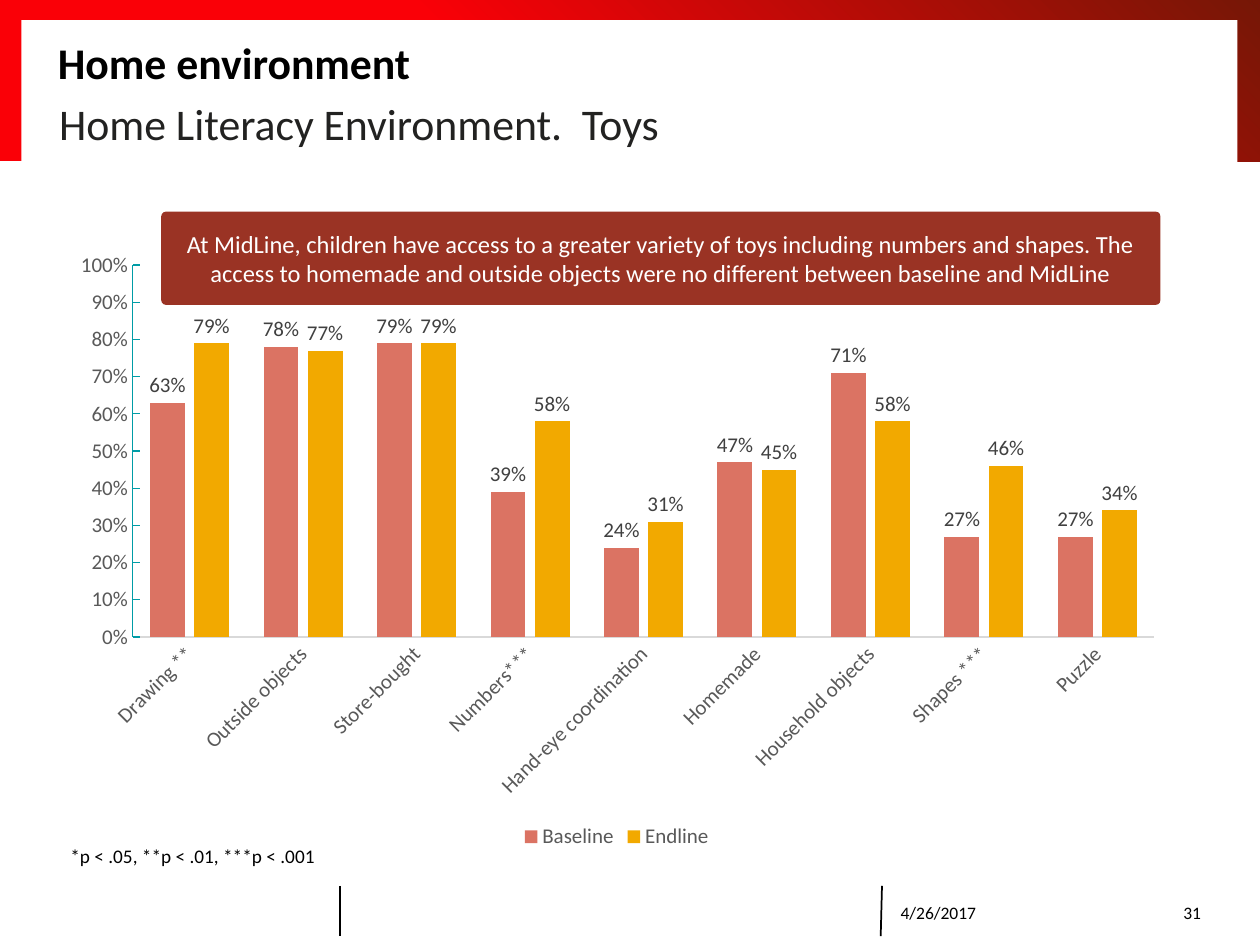
from lxml import etree
from pptx import Presentation
from pptx import util as u
from pptx.chart import data
from pptx.dml import color
from pptx.enum import chart as ch, shapes, text
from pptx.oxml import ns

FONT = "Calibri"
TITLE = "Home environment"
SUBTITLE = "Home Literacy Environment.  Toys"
MESSAGE = ("At MidLine, children have access to a greater variety of toys including "
           "numbers and shapes. The access to homemade and outside objects were no "
           "different between baseline and MidLine")
SIGNIFICANCE = "*p < .05, **p < .01, ***p < .001"
DATE, PAGE = "4/26/2017", "31"
TOYS = [
    ("Drawing **", 0.63, 0.79),
    ("Outside objects", 0.78, 0.77),
    ("Store-bought", 0.79, 0.79),
    ("Numbers***", 0.39, 0.58),
    ("Hand-eye coordination", 0.24, 0.31),
    ("Homemade", 0.47, 0.45),
    ("Household objects", 0.71, 0.58),
    ("Shapes ***", 0.27, 0.46),
    ("Puzzle", 0.27, 0.34),
]
ROUNDS = [("Baseline", "DB7363"), ("Endline", "F2A900")]
PLOT_AREA = {"x": 0.067, "y": 0.04, "w": 0.914, "h": 0.606}
DIVIDERS = [(2.7, 2.7), (7, 6.99)]


def rgb(value):
    return color.RGBColor.from_string(value)


def inches(*lengths):
    return [u.Inches(length) for length in lengths]


def style_font(font, size, hex_color, bold=False):
    font.name, font.size, font.bold = FONT, u.Pt(size), bold
    font.color.rgb = rgb(hex_color)


def write(shape, words, size=10, hex_color="000000", bold=False, inset=None, wrap=True,
          align=text.PP_ALIGN.LEFT, anchor=text.MSO_ANCHOR.MIDDLE, after=0, bullet=True):
    frame = shape.text_frame
    frame.word_wrap = wrap
    frame.auto_size = text.MSO_AUTO_SIZE.NONE
    frame.vertical_anchor = anchor
    if inset is not None:
        frame.margin_left = frame.margin_right = u.Inches(inset)
        frame.margin_top = frame.margin_bottom = u.Inches(inset)
    frame.text = words
    paragraph = frame.paragraphs[0]
    paragraph.alignment = align
    paragraph.space_before, paragraph.space_after = u.Pt(0), u.Pt(after)
    if not bullet:
        properties = paragraph._p.get_or_add_pPr()
        properties.set("marL", "0")
        properties.set("indent", "0")
        etree.SubElement(properties, ns.qn("a:buNone"))
    style_font(paragraph.runs[0].font, size, hex_color, bold)


def place(shape, *box):
    shape.left, shape.top, shape.width, shape.height = inches(*box)


def add_panel(slide, kind, *box, fill=None):
    panel = slide.shapes.add_shape(kind, *inches(*box))
    panel.shadow.inherit = False
    panel.line.fill.background()
    if fill:
        panel.fill.solid()
        panel.fill.fore_color.rgb = rgb(fill)
    return panel


def add_frame(slide):
    band = add_panel(slide, shapes.MSO_SHAPE.RECTANGLE, 0, 0, 10, 1.28)
    band.fill.gradient()
    band.fill.gradient_angle = 45
    for stop, (position, hue) in zip(band.fill.gradient_stops, [(0.4, "FA0007"), (1, "761706")]):
        stop.position, stop.color.rgb = position, rgb(hue)
    sheet = add_panel(slide, shapes.MSO_SHAPE.RECTANGLE, 0.17, 0.16, 9.65, 1.18, fill="FFFFFF")
    for top_x, bottom_x in DIVIDERS:
        divider = slide.shapes.add_connector(
            shapes.MSO_CONNECTOR.STRAIGHT, *inches(top_x, 7.03, bottom_x, 7.43))
        divider.line.color.rgb, divider.line.width = rgb("000000"), u.Pt(1)
        etree.SubElement(divider._element.spPr, ns.qn("a:effectLst"))
    tree = slide.shapes._spTree
    for index, panel in enumerate([band, sheet]):
        tree.insert(2 + index, panel._element)


def add_toy_chart(slide):
    toy_data = data.CategoryChartData(number_format="0%")
    names, *shares = zip(*TOYS)
    toy_data.categories = names
    for (name, _), values in zip(ROUNDS, shares):
        toy_data.add_series(name, values)
    chart = slide.shapes.add_chart(ch.XL_CHART_TYPE.COLUMN_CLUSTERED,
                                   *inches(0.46, 1.91, 8.87, 4.87), toy_data).chart
    style_font(chart.font, 10, "000000")
    chart.has_title = False
    chart.has_legend = True
    chart.legend.position = ch.XL_LEGEND_POSITION.BOTTOM
    chart.legend.include_in_layout = False
    style_font(chart.legend.font, 12, "595959")

    plot = chart.plots[0]
    plot.gap_width, plot.overlap, plot.vary_by_categories = 99, -27, False
    for series, (_, hue) in zip(plot.series, ROUNDS):
        series.format.fill.solid()
        series.format.fill.fore_color.rgb = rgb(hue)
        labels = series.data_labels
        labels.show_value = True
        labels.number_format, labels.number_format_is_linked = "0%", False
        labels.position = ch.XL_LABEL_POSITION.OUTSIDE_END
        style_font(labels.font, 12, "404040")

    toys, share = chart.category_axis, chart.value_axis
    for axis, hue, tick in [(toys, "D9D9D9", ch.XL_TICK_MARK.NONE),
                            (share, "009CA6", ch.XL_TICK_MARK.INSIDE)]:
        axis.has_major_gridlines = False
        axis.major_tick_mark, axis.minor_tick_mark = tick, ch.XL_TICK_MARK.NONE
        axis.format.line.color.rgb, axis.format.line.width = rgb(hue), u.Pt(0.75)
        style_font(axis.tick_labels.font, 12, "595959")
    toys._element.txPr.find(ns.qn("a:bodyPr")).set("rot", "-2700000")
    share.minimum_scale, share.maximum_scale, share.major_unit = 0, 1, 0.1
    share.tick_labels.number_format = "0%"
    share.tick_labels.number_format_is_linked = False

    area = chart._chartSpace.chart.plotArea
    for old in area.findall(ns.qn("c:layout")):
        area.remove(old)
    layout = etree.Element(ns.qn("c:layout"))
    manual = etree.SubElement(layout, ns.qn("c:manualLayout"))
    settings = {"layoutTarget": "inner", "xMode": "edge", "yMode": "edge", **PLOT_AREA}
    for tag, value in settings.items():
        etree.SubElement(manual, ns.qn("c:" + tag)).set("val", str(value))
    area.insert(0, layout)


def main():
    deck = Presentation()
    deck.slide_width, deck.slide_height = inches(10, 7.5)
    slide = deck.slides.add_slide(deck.slide_layouts[1])
    add_frame(slide)

    title, subtitle = slide.placeholders
    place(title, 0.46, 0.22, 9.06, 0.55)
    write(title, TITLE, size=25, bold=True, inset=0)
    place(subtitle, 0.47, 0.77, 9.06, 0.4)
    write(subtitle, SUBTITLE, size=25, hex_color="222221", inset=0,
          anchor=text.MSO_ANCHOR.TOP, after=6, bullet=False)

    write(slide.shapes.add_textbox(*inches(7.05, 7.04, 1.73, 0.4)), DATE)
    write(slide.shapes.add_textbox(*inches(8.78, 7.04, 0.85, 0.4)), PAGE,
          align=text.PP_ALIGN.RIGHT)

    callout = add_panel(slide, shapes.MSO_SHAPE.ROUNDED_RECTANGLE,
                        1.28, 1.68, 7.93, 0.74, fill="9A3324")
    callout.adjustments[0] = 0.05
    write(callout, MESSAGE, size=14, hex_color="FFFFFF", align=text.PP_ALIGN.CENTER)
    write(slide.shapes.add_textbox(*inches(0.46, 6.65, 2.18, 0.29)), SIGNIFICANCE,
          size=11, wrap=False, anchor=text.MSO_ANCHOR.TOP)
    add_toy_chart(slide)
    deck.save("out.pptx")


if __name__ == "__main__":
    main()
